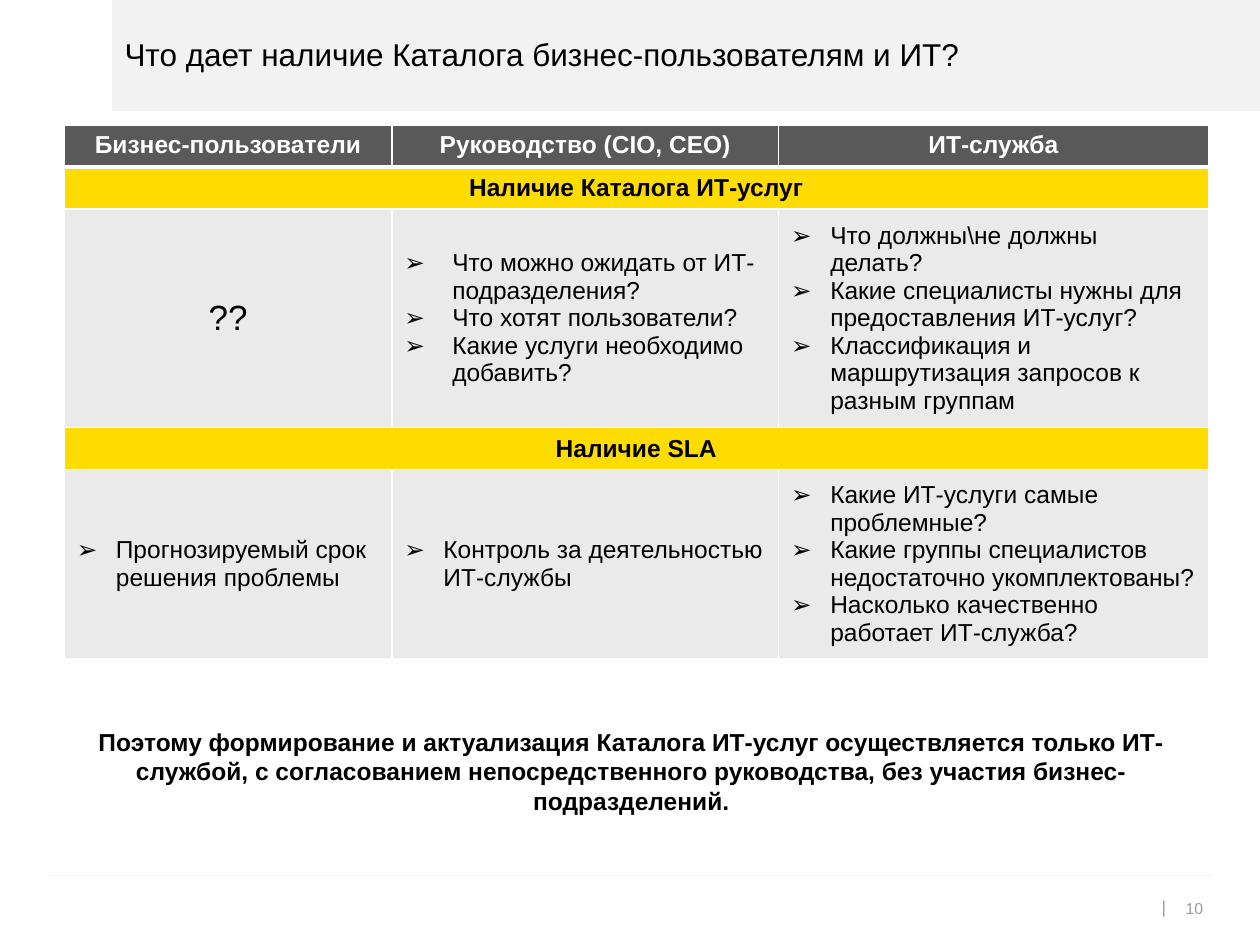
from dataclasses import dataclass

from lxml import etree
from pptx import Presentation
from pptx import util as u
from pptx.dml.color import RGBColor
from pptx.enum import shapes, text
from pptx.oxml import parse_xml
from pptx.oxml.ns import nsdecls, qn


@dataclass(frozen=True)
class Theme:
    font: str = "Arial"
    title: int = 18
    body: int = 14
    mark: int = 20
    page: int = 9
    black: str = "000000"
    white: str = "FFFFFF"
    band: str = "F2F2F2"
    header: str = "595959"
    section: str = "FFDC00"
    cell: str = "EAEAEA"
    muted: str = "9B9B9B"


THEME = Theme()
GRID_COLUMNS, GRID_ROWS = 100, 75
SLIDE_WIDTH, SLIDE_HEIGHT = u.Inches(10), u.Inches(7.5)
CENTER = text.PP_ALIGN.CENTER
MIDDLE = text.MSO_ANCHOR.MIDDLE

HEADINGS = ["Бизнес-пользователи", "Руководство (CIO, CEO)", "ИТ-служба"]
SECTIONS = [
    ("Наличие Каталога ИТ-услуг", [
        ["??"],
        ["Что можно ожидать от ИТ-подразделения?", "Что хотят пользователи?",
         "Какие услуги необходимо добавить?"],
        ["Что должны\\не должны делать?",
         "Какие специалисты нужны для предоставления ИТ-услуг?",
         "Классификация и маршрутизация запросов к разным группам"],
    ]),
    ("Наличие SLA", [
        ["Прогнозируемый срок решения проблемы"],
        ["Контроль за деятельностью ИТ-службы"],
        ["Какие ИТ-услуги самые проблемные?",
         "Какие группы специалистов недостаточно укомплектованы?",
         "Насколько качественно работает ИТ-служба?"],
    ]),
]
CONCLUSION = (
    "Поэтому формирование и актуализация Каталога ИТ-услуг осуществляется "
    "только ИТ-службой, с согласованием непосредственного руководства, "
    "без участия бизнес-подразделений."
)


def columns(count):
    return round(SLIDE_WIDTH * count / GRID_COLUMNS)


def rows(count):
    return round(SLIDE_HEIGHT * count / GRID_ROWS)


def place(left, top, width, height):
    return columns(left), rows(top), columns(width), rows(height)


def color(value):
    return RGBColor.from_string(value)


def add_bullet(paragraph, character, indent, tint=None, size=None):
    properties = paragraph._p.get_or_add_pPr()
    properties.set("marL", str(columns(indent)))
    properties.set("indent", str(-columns(indent)))
    if tint:
        bullet_color = etree.SubElement(properties, qn("a:buClr"))
        etree.SubElement(bullet_color, qn("a:srgbClr"), val=tint)
    if size:
        etree.SubElement(properties, qn("a:buSzPct"), val=str(size * 1000))
    etree.SubElement(properties, qn("a:buFont"), typeface=THEME.font)
    etree.SubElement(properties, qn("a:buChar"), char=character)


def style(paragraph, size, tint=THEME.black, bold=False):
    font = paragraph.font
    font.name, font.size, font.bold = THEME.font, u.Pt(size), bold
    font.color.rgb = color(tint)


def add_text(slide, area, content, anchor=text.MSO_ANCHOR.TOP):
    frame = slide.shapes.add_textbox(*place(*area)).text_frame
    frame.word_wrap = True
    frame.vertical_anchor = anchor
    frame.text = content
    return frame


def add_band(slide):
    band = slide.shapes.add_shape(
        shapes.MSO_SHAPE.RECTANGLE, *place(8.9, 0, 91.1, 8.8))
    band.shadow.inherit = False
    band.fill.solid()
    band.fill.fore_color.rgb = color(THEME.band)
    band.line.fill.background()


def add_rule(slide):
    rule = slide.shapes.add_connector(
        shapes.MSO_CONNECTOR.STRAIGHT,
        columns(3.7), rows(69.5), columns(96.3), rows(69.5))
    rule.line.color.rgb = color(THEME.band)
    rule.line.width = u.Pt(0.75)
    etree.SubElement(rule._element.spPr, qn("a:effectLst"))


def add_page_number(slide):
    frame = add_text(slide, (92.2, 70.8, 4, 2.5), "10", MIDDLE)
    frame.margin_left = frame.margin_right = 0
    paragraph = frame.paragraphs[0]
    add_bullet(paragraph, "|", 1.9, THEME.muted, 110)
    style(paragraph, THEME.page, THEME.muted)


def set_borders(cell, bottom):
    properties = cell._tc.get_or_add_tcPr()
    widths = {"lnL": 1, "lnR": 1, "lnT": 1, "lnB": bottom}
    for position, (side, width) in enumerate(widths.items()):
        properties.insert(position, parse_xml(
            f'<a:{side} {nsdecls("a")} w="{u.Pt(width)}"><a:solidFill>'
            f'<a:srgbClr val="{THEME.white}"/></a:solidFill></a:{side}>'))


def fill_cell(cell, lines, fill, size=THEME.body, tint=THEME.black,
              bold=False, indent=0, bottom=1, anchor=MIDDLE):
    set_borders(cell, bottom)
    cell.fill.solid()
    cell.fill.fore_color.rgb = color(fill)
    cell.vertical_anchor = anchor
    cell.text = "\n".join(lines)
    for paragraph in cell.text_frame.paragraphs:
        if indent:
            add_bullet(paragraph, "➢", indent)
        else:
            paragraph.alignment = CENTER
        style(paragraph, size, tint, bold)


def fill_section(table, top, title, answers):
    for column, answer in enumerate(answers):
        fill_cell(table.cell(top, column), [title] if column == 0 else [],
                  THEME.section, bold=True)
        if answer == ["??"]:
            size, indent = THEME.mark, 0
        else:
            size = THEME.body
            indent = 3.8 if (top, column) == (1, 1) else 3.1
        fill_cell(table.cell(top + 1, column), answer, THEME.cell, size,
                  indent=indent)
    table.cell(top, 0).merge(table.cell(top, len(answers) - 1))


def add_benefits_table(slide):
    widths, heights = [26, 30.7, 34.1], [3.2, 3.2, 16.3, 3.2, 14.1]
    table = slide.shapes.add_table(
        len(heights), len(widths),
        *place(5.1, 9.9, sum(widths), sum(heights))).table
    table.first_row = table.horz_banding = False
    for column, width in zip(table.columns, widths):
        column.width = columns(width)
    for row, height in zip(table.rows, heights):
        row.height = rows(height)
    for column, heading in enumerate(HEADINGS):
        fill_cell(table.cell(0, column), [heading], THEME.header,
                  tint=THEME.white, bold=True, bottom=3,
                  anchor=text.MSO_ANCHOR.TOP)
    for index, (title, answers) in enumerate(SECTIONS):
        fill_section(table, 1 + 2 * index, title, answers)


def add_conclusion(slide):
    paragraph = add_text(slide, (6, 57.2, 88.2, 8.1), CONCLUSION).paragraphs[0]
    paragraph.alignment = CENTER
    style(paragraph, THEME.body, bold=True)


def main():
    presentation = Presentation()
    presentation.slide_width = SLIDE_WIDTH
    presentation.slide_height = SLIDE_HEIGHT
    slide = presentation.slides.add_slide(presentation.slide_layouts[6])
    add_band(slide)
    add_rule(slide)
    add_page_number(slide)
    title = add_text(slide, (8.9, 0, 87, 8.6),
                     "Что дает наличие Каталога бизнес-пользователям и ИТ?",
                     MIDDLE)
    style(title.paragraphs[0], THEME.title)
    add_benefits_table(slide)
    add_conclusion(slide)
    presentation.save("out.pptx")


if __name__ == "__main__":
    main()
